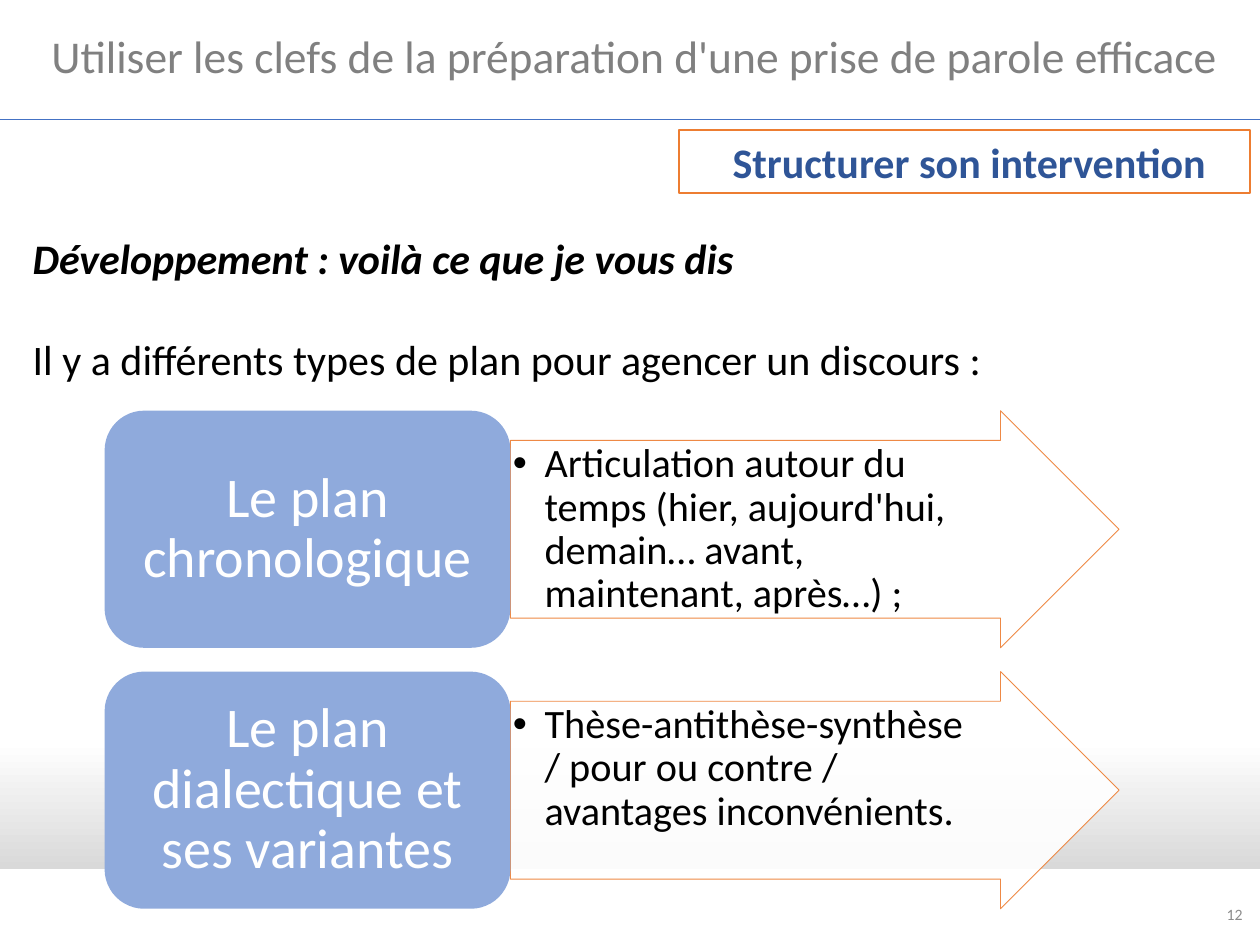
from lxml.etree import SubElement
from pptx import Presentation
from pptx.dml.color import RGBColor
from pptx.enum.shapes import MSO_CONNECTOR, MSO_SHAPE
from pptx.enum.text import MSO_ANCHOR, PP_ALIGN
from pptx.oxml.ns import qn
from pptx.util import Cm, Pt

FONT = "Calibri"
ORANGE = "ED7D31"
PLANS = [
    ("Le plan chronologique",
     "Articulation autour du temps (hier, aujourd'hui, demain… avant, maintenant, après…) ;"),
    ("Le plan dialectique et ses variantes",
     "Thèse-antithèse-synthèse / pour ou contre / avantages inconvénients."),
]
PLAN_TOP, PLAN_STEP, PLAN_HEIGHT = 8.28, 5.26, 4.78
LABEL_LEFT, LABEL_WIDTH, ARROW_WIDTH = 2.11, 8.18, 12.27


def rgb(color):
    return RGBColor.from_string(color)


def set_alpha(fill, percent):
    """Make a solid fill partly transparent."""
    color = fill._xPr.find(qn("a:solidFill"))[0]
    SubElement(color, qn("a:alpha")).set("val", str(percent * 1000))


def add_run(p, text, size, color, bold=False, italic=False):
    r = p.add_run()
    r.text = text
    r.font.name = FONT
    r.font.size = Pt(size)
    r.font.color.rgb = rgb(color)
    r.font.bold = bold
    r.font.italic = italic


def set_frame(sp, anchor=MSO_ANCHOR.TOP, insets=(0.25, 0.13, 0.25, 0.13)):
    """Wrap the text of a shape, anchor it and set its insets in cm; return the frame."""
    tf = sp.text_frame
    tf.word_wrap = True
    tf.vertical_anchor = anchor
    tf.margin_left, tf.margin_top, tf.margin_right, tf.margin_bottom = map(Cm, insets)
    return tf


def add_text(s, left, top, width, height, anchor=MSO_ANCHOR.TOP):
    box = s.shapes.add_textbox(Cm(left), Cm(top), Cm(width), Cm(height))
    return set_frame(box, anchor)


def add_box(s, kind, left, top, width, height, fill=None, line=None, weight=1):
    sp = s.shapes.add_shape(kind, Cm(left), Cm(top), Cm(width), Cm(height))
    sp.shadow.inherit = False
    if fill:
        sp.fill.solid()
        sp.fill.fore_color.rgb = rgb(fill)
    if line:
        sp.line.color.rgb = rgb(line)
        sp.line.width = Pt(weight)
    else:
        sp.line.fill.background()
    return sp


def add_bottom_shade(s):
    sp = add_box(s, MSO_SHAPE.RECTANGLE, 0, 10.92, 25.4, 6.6)
    sp.fill.gradient()
    sp.fill.gradient_angle = 270
    stops = [(0.61, "FFFFFF"), (1, "D9D9D9")]
    for stop, (position, color) in zip(sp.fill.gradient_stops, stops):
        stop.position = position
        stop.color.rgb = rgb(color)


def add_rule(s):
    line = s.shapes.add_connector(MSO_CONNECTOR.STRAIGHT, 0, Cm(2.4), Cm(25.4), Cm(2.4))
    line.line.color.rgb = rgb("4472C4")
    line.line.width = Pt(0.5)
    SubElement(line._element.spPr, qn("a:effectLst"))


def add_bullet(p, indent):
    pPr = p._p.get_or_add_pPr()
    pPr.set("marL", str(Cm(indent)))
    pPr.set("indent", str(-Cm(indent)))
    SubElement(pPr, qn("a:buFont")).set("typeface", "Arial")
    SubElement(pPr, qn("a:buChar")).set("char", "•")


def add_plan(s, top, label, detail):
    """Add one kind of plan: a rounded label and the arrow that explains it."""
    arrow = add_box(s, MSO_SHAPE.RIGHT_ARROW, LABEL_LEFT + LABEL_WIDTH, top,
                    ARROW_WIDTH, PLAN_HEIGHT, "FFFFFF", ORANGE, 0.5)
    arrow.adjustments[0], arrow.adjustments[1] = 0.75, 0.5
    set_alpha(arrow.fill, 90)
    set_alpha(arrow.line.fill, 90)
    p = set_frame(arrow, insets=(0.05, 0.05, 1.22, 0.05)).paragraphs[0]
    p.alignment = PP_ALIGN.LEFT
    p.line_spacing = 0.9
    add_bullet(p, 0.64)
    add_run(p, detail, 23, "000000")

    box = add_box(s, MSO_SHAPE.ROUNDED_RECTANGLE, LABEL_LEFT, top,
                  LABEL_WIDTH, PLAN_HEIGHT, "8FAADC")
    p = set_frame(box, MSO_ANCHOR.MIDDLE, (0.33, 0.18, 0.33, 0.18)).paragraphs[0]
    p.alignment = PP_ALIGN.CENTER
    p.line_spacing = 0.9
    add_run(p, label, 32, "FFFFFF")


def main():
    prs = Presentation()
    prs.slide_width, prs.slide_height = Cm(25.4), Cm(19.05)
    s = prs.slides.add_slide(prs.slide_layouts[6])

    add_bottom_shade(s)
    p = add_text(s, 0.2, 0.43, 25.2, 1.37).paragraphs[0]
    p.alignment = PP_ALIGN.CENTER
    add_run(p, "Utiliser les clefs de la préparation d'une prise de parole efficace", 26, "808080")
    add_rule(s)

    p = add_text(s, 19.38, 17.93, 5.92, 1.02, MSO_ANCHOR.MIDDLE).paragraphs[0]
    p.alignment = PP_ALIGN.RIGHT
    add_run(p, "12", 9, "8C8C8C")

    tf = add_text(s, 0.41, 4.55, 24.89, 3.33)
    add_run(tf.paragraphs[0], "Développement : voilà ce que je vous dis", 24, "000000", True, True)
    p = tf.add_paragraph()
    p.space_before = Pt(29)
    add_run(p, "Il y a différents types de plan pour agencer un discours :", 24, "000000")

    heading = add_box(s, MSO_SHAPE.RECTANGLE, 13.69, 2.62, 11.51, 1.27, "FFFFFF", ORANGE)
    p = set_frame(heading, MSO_ANCHOR.MIDDLE, (0.44, 0.13, 0.25, 0.13)).paragraphs[0]
    p.alignment = PP_ALIGN.CENTER
    add_run(p, "Structurer son intervention", 24, "2F5597", True)

    for i, (label, detail) in enumerate(PLANS):
        add_plan(s, PLAN_TOP + i * PLAN_STEP, label, detail)

    prs.save("out.pptx")


if __name__ == "__main__":
    main()
